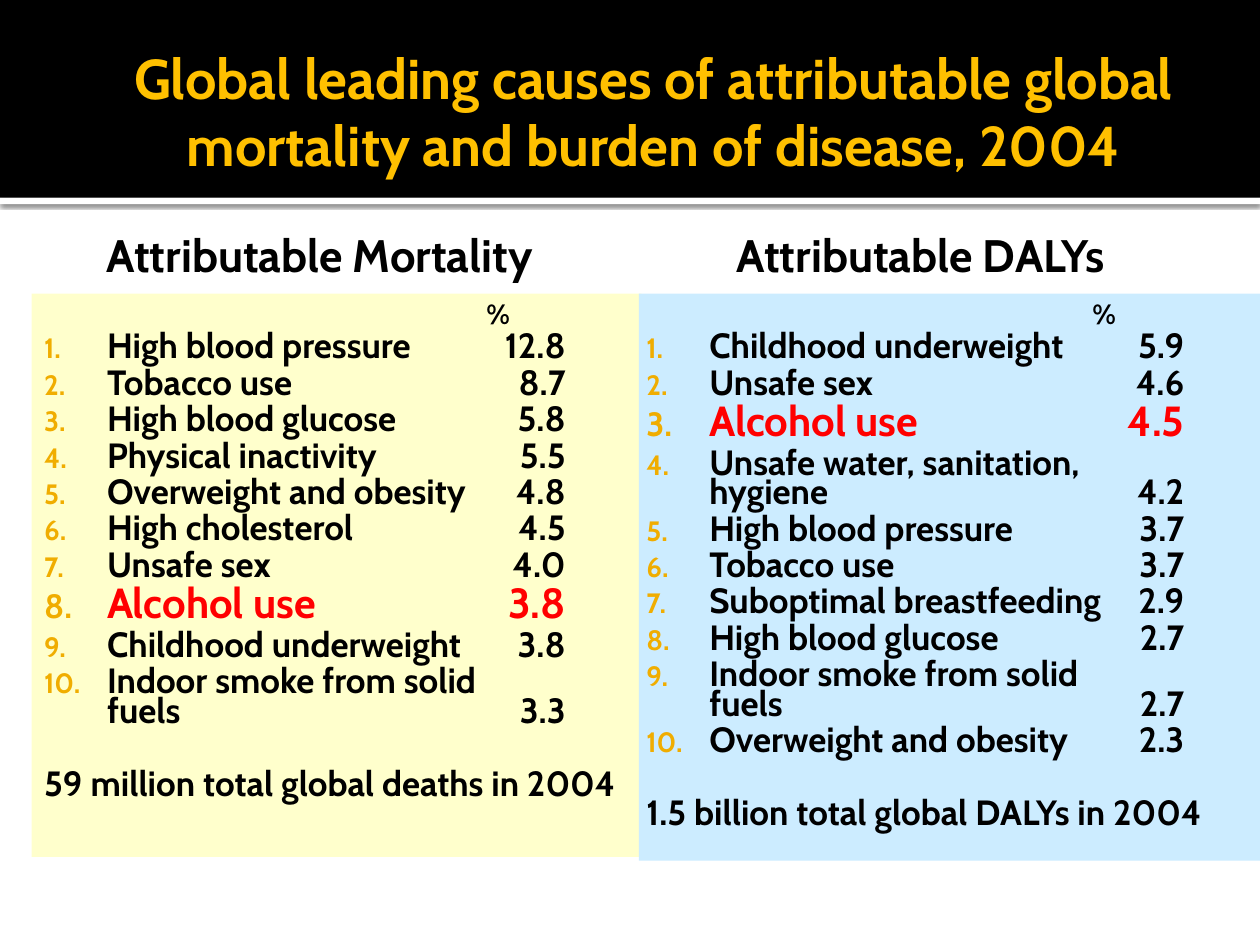
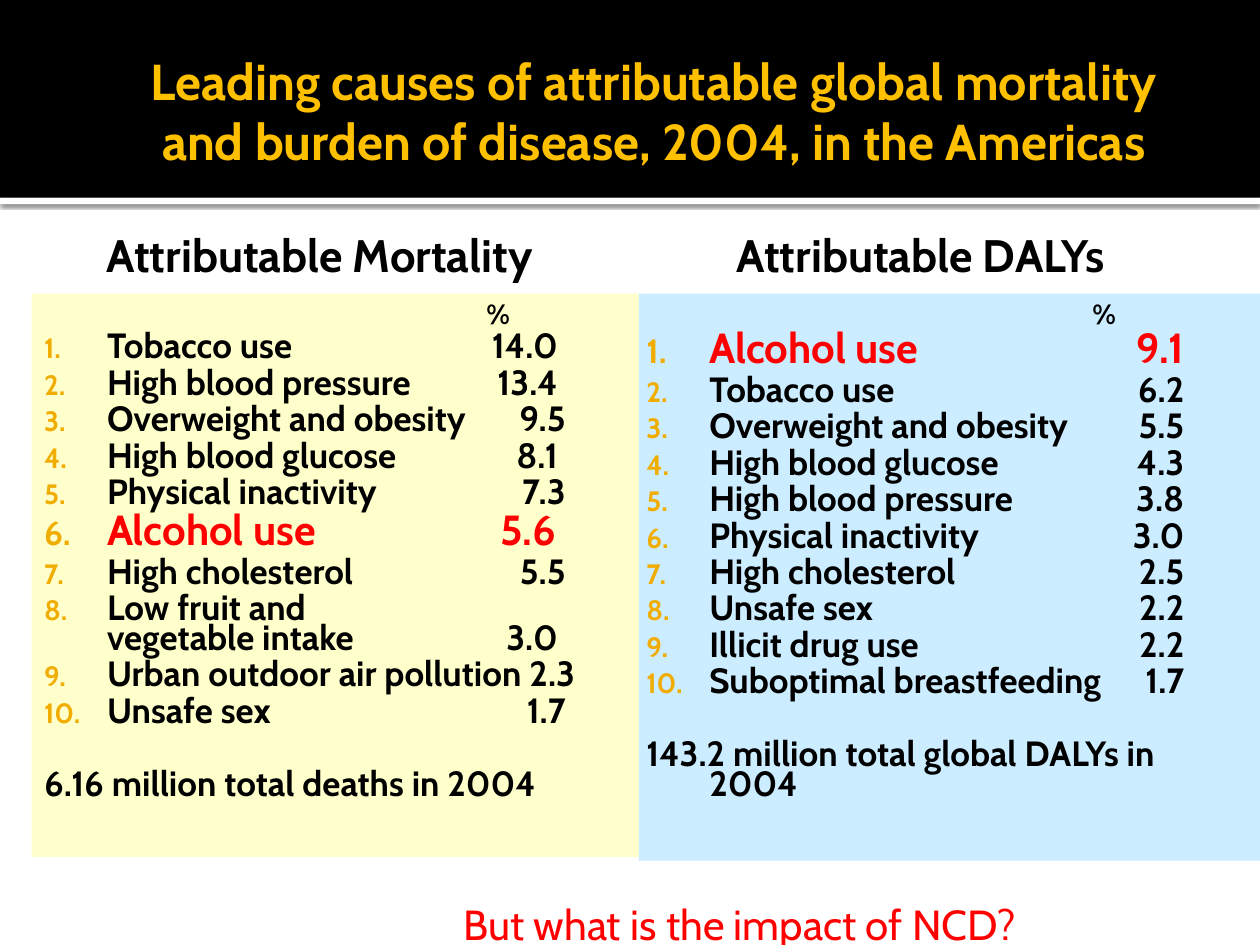
from lxml import etree
from pptx import Presentation
from pptx.dml.color import RGBColor
from pptx.enum.shapes import MSO_SHAPE
from pptx.enum.text import MSO_ANCHOR, MSO_AUTO_SIZE, PP_ALIGN
from pptx.oxml.ns import qn
from pptx.util import Inches, Pt

RECT = MSO_SHAPE.RECTANGLE
TOP, MIDDLE = MSO_ANCHOR.TOP, MSO_ANCHOR.MIDDLE
NO_FIT, GROW = MSO_AUTO_SIZE.NONE, MSO_AUTO_SIZE.SHAPE_TO_FIT_TEXT
LEFT, CENTER = PP_ALIGN.LEFT, PP_ALIGN.CENTER

FONT = "Cabin"
COLORS = {"black": "000000", "white": "FFFFFF", "title": "FFC000", "number": "F0AD00",
          "alert": "FF0000", "mortality": "FFFFCC", "dalys": "CCECFF"}
HIGHLIGHT = "Alcohol use"

# Content: a trailing space in a value sets it a little left of the tab stop
SLIDES = [
    {"title": "Global leading causes of attributable global mortality "
              "and burden of disease, 2004",
     "title_size": 32,
     "mortality": [("High blood pressure", "12.8"), ("Tobacco use", "8.7"),
                   ("High blood glucose", "5.8"), ("Physical inactivity", "5.5"),
                   ("Overweight and obesity", "4.8"), ("High cholesterol", "4.5"),
                   ("Unsafe sex", "4.0"), ("Alcohol use", "3.8"),
                   ("Childhood underweight", "3.8"),
                   ("Indoor smoke from solid\nfuels", "3.3")],
     "mortality_total": "59 million total global deaths in 2004",
     "dalys": [("Childhood underweight", "5.9"), ("Unsafe sex", "4.6"),
               ("Alcohol use", "4.5"), ("Unsafe water, sanitation,\nhygiene", "4.2"),
               ("High blood pressure", "3.7"), ("Tobacco use", "3.7"),
               ("Suboptimal breastfeeding", "2.9"), ("High blood glucose", "2.7"),
               ("Indoor smoke from solid\nfuels", "2.7"),
               ("Overweight and obesity", "2.3")],
     "dalys_total": "1.5 billion total global DALYs in 2004"},
    {"title": "Leading causes of attributable global mortality "
              "and burden of disease, 2004, in the Americas",
     "title_size": 28.8,
     "mortality": [("Tobacco use", "14.0 "), ("High blood pressure", "13.4 "),
                   ("Overweight and obesity", "9.5"), ("High blood glucose", "8.1 "),
                   ("Physical inactivity", "7.3"), ("Alcohol use", "5.6 "),
                   ("High cholesterol", "5.5"),
                   ("Low fruit and\nvegetable intake", "3.0 "),
                   ("Urban outdoor air pollution ", "2.3"), ("Unsafe sex", "1.7")],
     "mortality_total": "6.16 million total deaths in 2004",
     "dalys": [("Alcohol use", "9.1"), ("Tobacco use", "6.2"),
               ("Overweight and obesity", "5.5"), ("High blood glucose", "4.3"),
               ("High blood pressure", "3.8"), ("Physical inactivity", "3.0"),
               ("High cholesterol", "2.5"), ("Unsafe sex", "2.2"),
               ("Illicit drug use", "2.2"), ("Suboptimal breastfeeding", "1.7")],
     "dalys_total": "143.2 million total global DALYs in 2004",
     "question": "But what is the impact of NCD?"},
]

# Columns: placeholder index, box, left inset, value tab, % indent, heading and its box
COLUMNS = {
    "mortality": {"idx": 1, "box": (0.25, 2.33, 4.84, 4.47), "inset": 0.1, "tab": 4.42,
                  "percent": 3.51, "heading": "Attributable Mortality",
                  "heading_box": (0.75, 1.75, 3.83, 0.54)},
    "dalys": {"idx": 2, "box": (5.07, 2.33, 4.93, 4.5), "inset": 0.06, "tab": 4.37,
              "percent": 3.54, "heading": "Attributable DALYs",
              "heading_box": (5.75, 1.75, 3.23, 0.54)},
}


def rgb(name):
    return RGBColor.from_string(COLORS[name])


def place(sp, box):
    sp.left, sp.top, sp.width, sp.height = [Inches(v) for v in box]


def set_frame(tf, margins, anchor, fit=NO_FIT):
    tf.word_wrap = True
    tf.auto_size = fit
    tf.vertical_anchor = anchor
    tf.margin_left, tf.margin_top, tf.margin_right, tf.margin_bottom = map(Inches, margins)


def add_run(p, text, size, color="black", bold=True):
    r = p.add_run()
    r.text = text
    f = r.font
    f.name, f.size, f.bold = FONT, Pt(size), bold
    f.color.rgb = rgb(color)


def child(parent, tag, **attrs):
    el = etree.SubElement(parent, qn(tag))
    for key, value in attrs.items():
        el.set(key, str(value))
    return el


def format_line(p, size, margin=0.5, indent=-0.5, tab=None, before=0):
    """Tight list line; a tab position makes it a numbered one."""
    p.alignment = LEFT
    p.line_spacing = 0.7
    p.space_before, p.space_after = Pt(before), Pt(size * 0.2)
    ppr = p._p.get_or_add_pPr()
    ppr.set("marL", str(Inches(margin)))
    ppr.set("indent", str(Inches(indent)))
    if tab is None:
        child(ppr, "a:buNone")
        return
    child(child(ppr, "a:buClr"), "a:srgbClr", val=COLORS["number"])
    child(ppr, "a:buSzPct", val=80000)
    child(ppr, "a:buFont", typeface=FONT)
    child(ppr, "a:buAutoNum", type="arabicPeriod")
    child(child(ppr, "a:tabLst"), "a:tab", pos=Inches(tab), algn="r")


def add_text(s, box, text, size, color="black", bold=True):
    sp = s.shapes.add_textbox(*[Inches(v) for v in box])
    set_frame(sp.text_frame, (0.1, 0.05, 0.1, 0.05), TOP, GROW)
    add_run(sp.text_frame.paragraphs[0], text, size, color, bold)


def add_bands(s, layout):
    """Header band and shadowed rule, moved to the layout so all slides share them."""
    bands = [("white", (0, 1.57, 10, 0.05)), ("black", (0, 0, 10, 1.57))]
    for i, (color, box) in enumerate(bands):
        sp = s.shapes.add_shape(RECT, *[Inches(v) for v in box])
        sp.fill.solid()
        sp.fill.fore_color.rgb = rgb(color)
        sp.line.fill.background()
        sp.shadow.inherit = False
        if color == "white":
            effects = sp._element.spPr.find(qn("a:effectLst"))
            shadow = child(effects, "a:outerShdw", blurRad=Pt(2.5), dist=Pt(0.8),
                           dir=90 * 60000, algn="t", rotWithShape=0)
            child(child(shadow, "a:srgbClr", val=COLORS["black"]), "a:alpha", val=60000)
        layout.shapes._spTree.insert(2 + i, sp._element)


def add_column(s, kind, causes, total):
    col = COLUMNS[kind]
    sp = s.placeholders[col["idx"]]
    place(sp, col["box"])
    sp.fill.solid()
    sp.fill.fore_color.rgb = rgb(kind)
    tf = sp.text_frame
    set_frame(tf, (col["inset"], 0.1, 0.1, 0.05), TOP)

    # Percent sign above the values
    p = tf.paragraphs[0]
    format_line(p, 16, margin=col["percent"], indent=0)
    add_run(p, "%", 16)

    # Ranked causes
    for cause, value in causes:
        size, color = (24, "alert") if cause == HIGHLIGHT else (20, "black")
        p = tf.add_paragraph()
        format_line(p, size, tab=col["tab"])
        *upper, last = cause.split("\n")
        for line in upper:
            add_run(p, line, size, color)
            p.add_line_break()
        add_run(p, f"{last}\t{value}", size, color)

    # Total, one line below the list
    p = tf.add_paragraph()
    format_line(p, 20, before=21)
    add_run(p, total, 20)
    add_text(s, col["heading_box"], col["heading"], 26)


def main():
    prs = Presentation()
    prs.slide_width, prs.slide_height = Inches(10), Inches(7.5)
    layout = prs.slide_layouts[3]
    for n, data in enumerate(SLIDES):
        s = prs.slides.add_slide(layout)
        if n == 0:
            add_bands(s, layout)
        title = s.shapes.title
        place(title, (0.75, 0.25, 8.83, 1.25))
        set_frame(title.text_frame, (0.1, 0.05, 0.05, 0.05), MIDDLE)
        p = title.text_frame.paragraphs[0]
        p.alignment = CENTER
        add_run(p, data["title"], data["title_size"], "title")
        for kind in COLUMNS:
            add_column(s, kind, data[kind], data[kind + "_total"])
        if "question" in data:
            add_text(s, (3.58, 7.08, 5.75, 0.5), data["question"], 24, "alert", False)
    prs.save("out.pptx")


if __name__ == "__main__":
    main()
